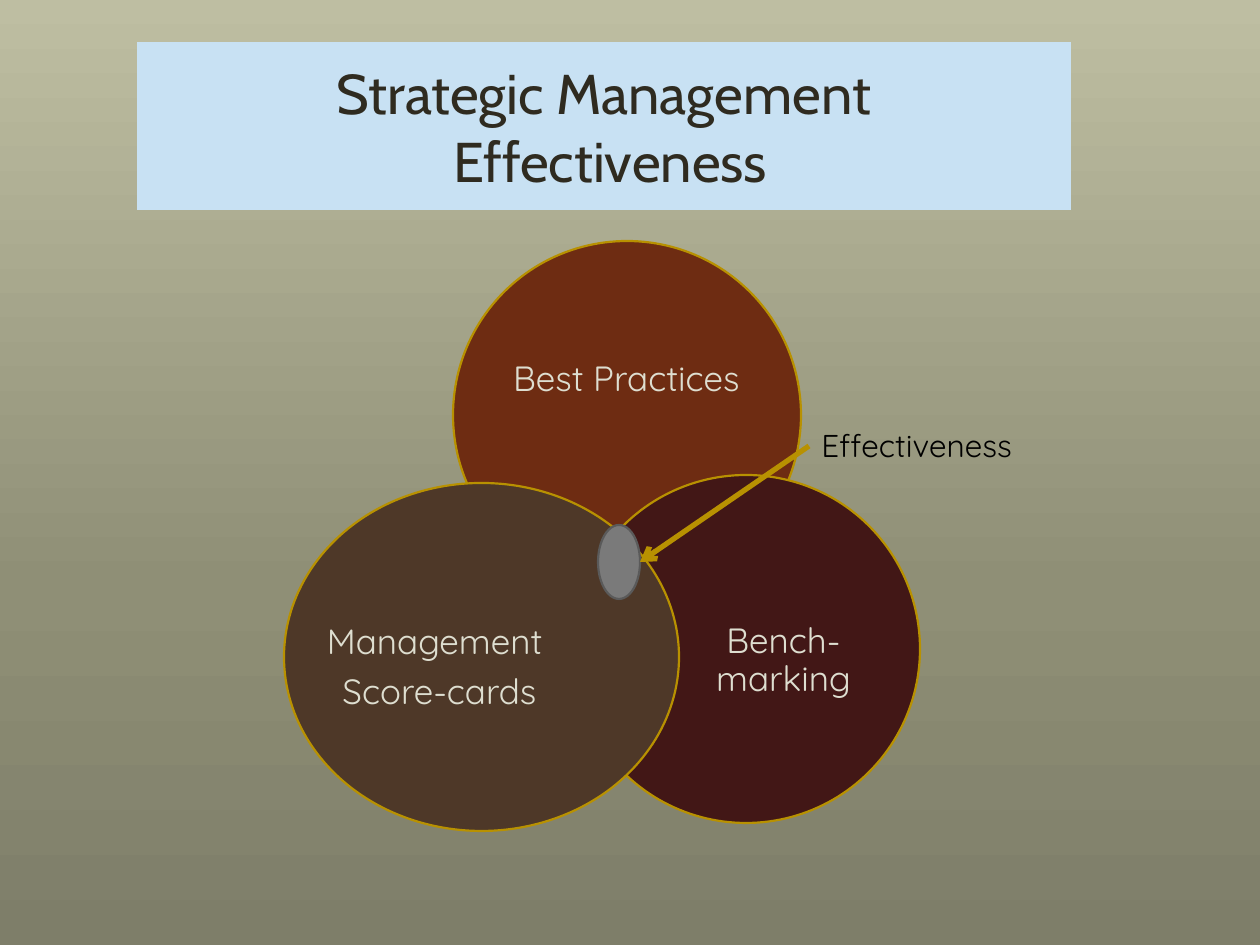
import copy
import pptx
import pptx.util
import pptx.dml.color
import pptx.enum.shapes
import pptx.enum.text
import pptx.oxml.ns
import pptx.oxml.xmlchemy

SCALE = 914400 // 126
GOLD = "B89101"
PALE = "DEDED0"
CENTER = pptx.enum.text.PP_ALIGN.CENTER
MIDDLE = pptx.enum.text.MSO_ANCHOR.MIDDLE
OVAL = pptx.enum.shapes.MSO_SHAPE.OVAL


def color(value):
    return pptx.dml.color.RGBColor.from_string(value)


def add_span(para, text, font, size, value):
    span = para.add_run()
    span.text = text
    span.font.name = font
    span.font.size = pptx.util.Pt(size)
    span.font.color.rgb = color(value)


deck = pptx.Presentation()
deck.slide_width = pptx.util.Inches(10)
deck.slide_height = pptx.util.Inches(7.5)
page = deck.slides.add_slide(deck.slide_layouts[5])

backdrop = page.background.fill
backdrop.gradient()
backdrop.gradient_angle = 270
first_stop = page.background._cSld.find(".//" + pptx.oxml.ns.qn("a:gs"))
first_stop.addnext(copy.deepcopy(first_stop))
stops = [(0, "BEBEA2"), (0.62, "8F8F76"), (1, "7E7E69")]
for stop, (position, value) in zip(backdrop.gradient_stops, stops):
    stop.position = position
    stop.color.rgb = color(value)

title = page.shapes.title
title.left, title.top, title.width, title.height = [n * SCALE for n in (137, 42, 934, 168)]
title.fill.solid()
title.fill.fore_color.rgb = color("C8E1F3")
title.text_frame.auto_size = pptx.enum.text.MSO_AUTO_SIZE.NONE
title.text_frame.vertical_anchor = MIDDLE
para = title.text_frame.paragraphs[0]
para.alignment = CENTER
add_span(para, "Strategic Management", "Cabin", 32, "2F2B20")
para.add_line_break()
add_span(para, " Effectiveness", "Cabin", 32, "2F2B20")

circles = [
    ((453, 241, 348, 348), "6E2C12", (499, 302, 255, 156), ["Best Practices"]),
    ((572, 475, 348, 348), "421716", (679, 566, 209, 191), ["Bench-marking"]),
    ((284, 483, 395, 348), "4E3828", (321, 573, 237, 191), ["Management ", "Score-cards"]),
]
for circle_area, fill, label_area, lines in circles:
    circle = page.shapes.add_shape(OVAL, *[n * SCALE for n in circle_area])
    circle.shadow.inherit = False
    circle.fill.solid()
    circle.fill.fore_color.rgb = color(fill)
    circle.line.color.rgb = color(GOLD)
    circle.line.width = pptx.util.Pt(1.25)

    box = page.shapes.add_textbox(*[n * SCALE for n in label_area])
    frame = box.text_frame
    frame.word_wrap = True
    frame.vertical_anchor = MIDDLE
    frame.margin_left = frame.margin_right = frame.margin_top = frame.margin_bottom = 0
    for index, text in enumerate(lines):
        para = frame.add_paragraph() if index else frame.paragraphs[0]
        para.alignment = CENTER
        para.line_spacing = 0.9
        para.space_after = pptx.util.Pt(7)
        add_span(para, text, "Quicksand", 20, PALE)

box = page.shapes.add_textbox(*[n * SCALE for n in (809, 420, 252, 50)])
box.text_frame.word_wrap = True
box.text_frame.auto_size = pptx.enum.text.MSO_AUTO_SIZE.SHAPE_TO_FIT_TEXT
add_span(box.text_frame.paragraphs[0], "Effectiveness", "Quicksand", 18, "000000")

overlap = page.shapes.add_shape(OVAL, *[n * SCALE for n in (598, 525, 42, 74)])
overlap.shadow.inherit = False
overlap.fill.solid()
overlap.fill.fore_color.rgb = color("7A7A7A")
overlap.line.color.rgb = color("5A5A5A")
overlap.line.width = pptx.util.Pt(1.25)

arrow = page.shapes.add_connector(
    pptx.enum.shapes.MSO_CONNECTOR.STRAIGHT, *[n * SCALE for n in (809, 446, 640, 562)]
)
arrow.line.color.rgb = color(GOLD)
arrow.line.width = pptx.util.Pt(3)
head = pptx.oxml.xmlchemy.OxmlElement("a:tailEnd")
head.set("type", "arrow")
arrow.line._get_or_add_ln().append(head)
arrow._element.spPr.append(pptx.oxml.xmlchemy.OxmlElement("a:effectLst"))

deck.save("out.pptx")
